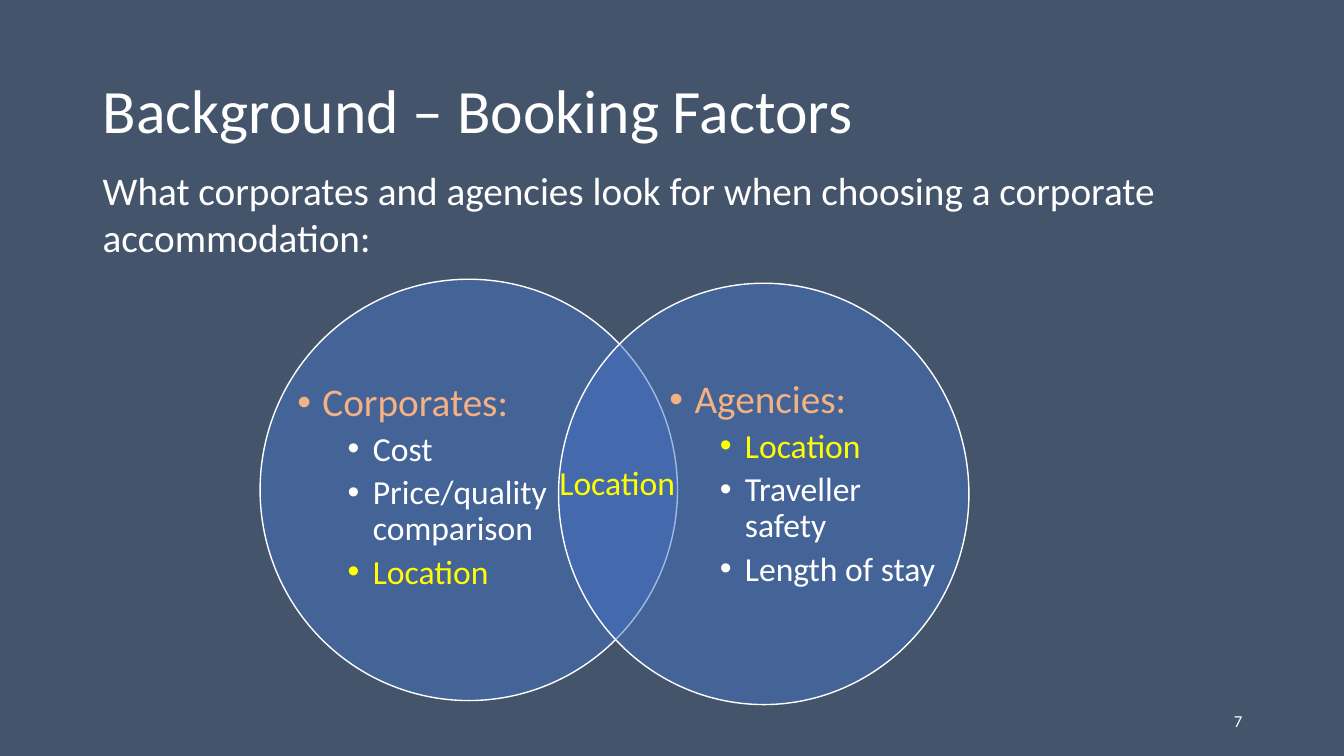
from dataclasses import dataclass

from lxml import etree
from pptx import Presentation
from pptx.dml.color import RGBColor
from pptx.enum.shapes import MSO_SHAPE
from pptx.enum.text import MSO_ANCHOR, MSO_AUTO_SIZE, PP_ALIGN
from pptx.oxml.ns import qn
from pptx.util import Inches, Pt


@dataclass(frozen=True)
class Theme:
    font: str = "Calibri"
    background: str = "44546A"
    circle: str = "4472C4"
    text: str = "FFFFFF"
    heading: str = "F4B183"
    shared: str = "FFFF00"
    title_size: int = 44
    heading_size: int = 28
    factor_size: int = 24
    number_size: int = 12


THEME = Theme()
SHARED_FACTOR = "Location"


def rgb(color):
    return RGBColor.from_string(color)


def write(paragraph, text, *, size, color=THEME.text, align=PP_ALIGN.LEFT,
          line_spacing=1.0, before=0):
    paragraph.alignment = align
    paragraph.line_spacing = line_spacing
    paragraph.space_before = Pt(before)
    run = paragraph.add_run()
    run.text = text
    run.font.name = THEME.font
    run.font.size = Pt(size)
    run.font.color.rgb = rgb(color)


def add_bullet(paragraph, margin):
    """Give the paragraph a round bullet that hangs left of its margin."""
    properties = paragraph._p.get_or_add_pPr()
    properties.set("marL", str(Inches(margin)))
    properties.set("indent", str(Inches(-0.25)))
    etree.SubElement(properties, qn("a:buFont")).set("typeface", "Arial")
    etree.SubElement(properties, qn("a:buChar")).set("char", "•")


def add_text_frame(slide, left, top, width, height, wrap=True):
    frame = slide.shapes.add_textbox(
        Inches(left), Inches(top), Inches(width), Inches(height)).text_frame
    frame.word_wrap = wrap
    return frame


def add_title(slide, text):
    title = slide.shapes.title
    title.left, title.top = Inches(0.92), Inches(0.4)
    title.width, title.height = Inches(11.5), Inches(1.45)
    frame = title.text_frame
    frame.auto_size = MSO_AUTO_SIZE.NONE
    frame.vertical_anchor = MSO_ANCHOR.MIDDLE
    write(frame.paragraphs[0], text, size=THEME.title_size, line_spacing=0.9)


def add_circle(slide, left, top, width, height):
    circle = slide.shapes.add_shape(
        MSO_SHAPE.OVAL, Inches(left), Inches(top), Inches(width), Inches(height))
    circle.shadow.inherit = False
    circle.fill.solid()
    circle.fill.fore_color.rgb = rgb(THEME.circle)
    fill_color = circle.fill._xPr.find(qn("a:solidFill"))[0]
    etree.SubElement(fill_color, qn("a:alpha")).set("val", "50000")
    circle.line.color.rgb = rgb(THEME.text)
    circle.line.width = Pt(1)


def add_factors(slide, left, top, width, height, heading, factors):
    frame = add_text_frame(slide, left, top, width, height)
    first = frame.paragraphs[0]
    write(first, heading, size=THEME.heading_size, color=THEME.heading,
          line_spacing=0.9, before=10)
    add_bullet(first, 0.25)
    for factor in factors:
        paragraph = frame.add_paragraph()
        paragraph.level = 1
        color = THEME.shared if factor == SHARED_FACTOR else THEME.text
        write(paragraph, factor, size=THEME.factor_size, color=color,
              line_spacing=0.9, before=5)
        add_bullet(paragraph, 0.75)


def main():
    presentation = Presentation()
    presentation.slide_width = Inches(13.33)
    presentation.slide_height = Inches(7.5)
    slide = presentation.slides.add_slide(presentation.slide_layouts[5])
    slide.background.fill.solid()
    slide.background.fill.fore_color.rgb = rgb(THEME.background)

    add_circle(slide, 2.58, 2.77, 4.14, 4.18)
    add_circle(slide, 5.54, 2.81, 4.07, 4.18)
    add_title(slide, "Background – Booking Factors")
    add_factors(slide, 2.85, 3.75, 3.25, 2.28, "Corporates:",
                ["Cost", "Price/quality comparison", SHARED_FACTOR])
    add_factors(slide, 6.54, 3.72, 2.88, 2.53, "Agencies:",
                [SHARED_FACTOR, "Traveller safety", "Length of stay"])

    intro = add_text_frame(slide, 0.92, 1.6, 11.25, 1.35)
    write(intro.paragraphs[0],
          "What corporates and agencies look for when choosing a corporate "
          "accommodation:", size=THEME.heading_size)
    overlap = add_text_frame(slide, 5.45, 4.53, 1.38, 0.5, wrap=False)
    write(overlap.paragraphs[0], SHARED_FACTOR, size=THEME.factor_size,
          color=THEME.shared)
    page_number = add_text_frame(slide, 9.42, 6.95, 3, 0.4)
    page_number.vertical_anchor = MSO_ANCHOR.MIDDLE
    write(page_number.paragraphs[0], "7", size=THEME.number_size,
          align=PP_ALIGN.RIGHT)

    presentation.save("out.pptx")


if __name__ == "__main__":
    main()
